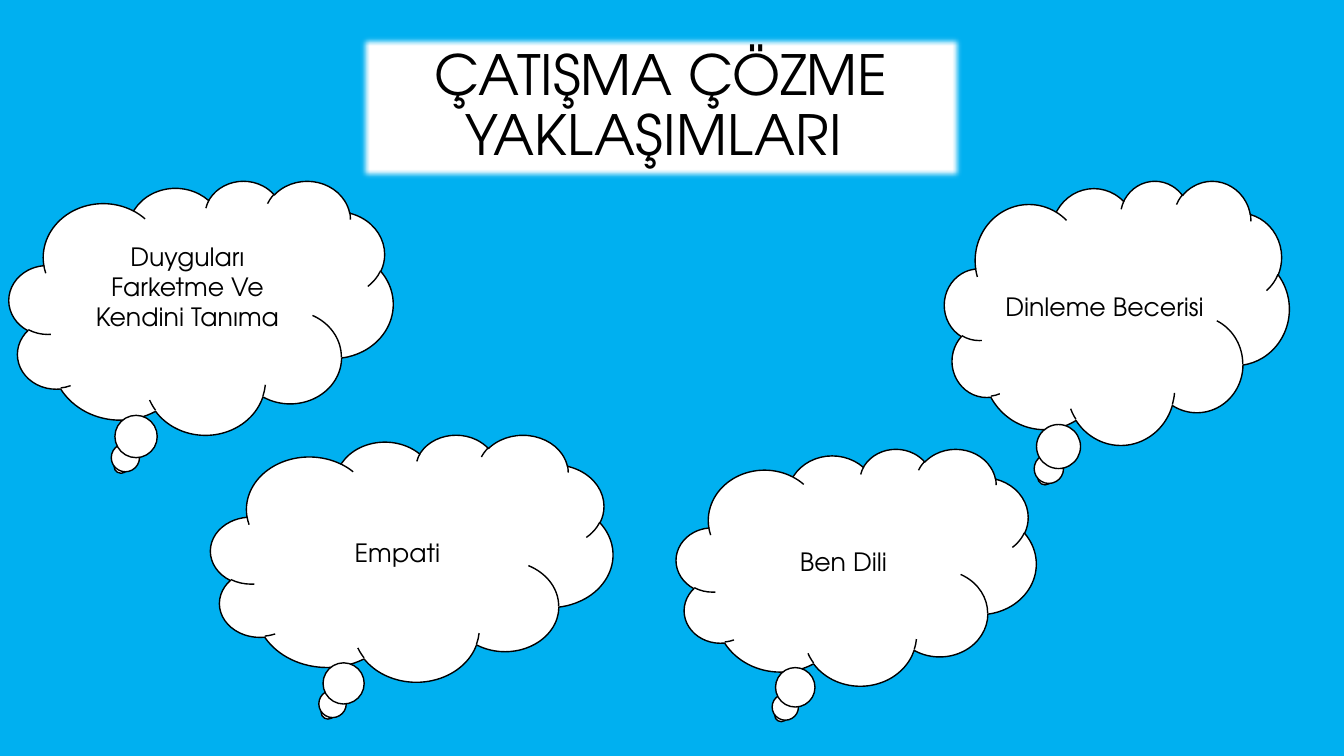
from dataclasses import dataclass

from lxml import etree
from pptx import Presentation
from pptx import util as u
from pptx.dml import color
from pptx.enum import shapes, text
from pptx.oxml import ns


@dataclass(frozen=True)
class Theme:
    font: str = "TeX Gyre Adventor"
    background: color.RGBColor = color.RGBColor(0x00, 0xB0, 0xF0)
    panel: color.RGBColor = color.RGBColor(0xFF, 0xFF, 0xFF)
    ink: color.RGBColor = color.RGBColor(0x00, 0x00, 0x00)
    title_size: float = 39.6
    cloud_size: float = 18
    outline: float = 1
    soft_edge: float = 5


@dataclass(frozen=True)
class Panel:
    """A white shape with centred text; all lengths are in points."""
    wording: str
    left: float
    top: float
    width: float
    height: float
    bottom_inset: float = 3.6


THEME = Theme()
TITLE = Panel("ÇATIŞMA ÇÖZME YAKLAŞIMLARI ", 256.32, 24.48, 432, 104.4)
CLOUDS = [
    Panel("Duyguları Farketme Ve Kendini Tanıma", 6.48, 128.88, 274.32, 181.44,
          bottom_inset=25),
    Panel("Ben Dili", 483.12, 320.4, 257.04, 169.2),
    Panel("Dinleme Becerisi", 674.64, 128.88, 246.24, 188.64),
    Panel("Empati", 150.48, 310.32, 287.28, 176.4),
]


def add_panel(slide, panel: Panel, kind: shapes.MSO_SHAPE, size: float):
    shape = slide.shapes.add_shape(kind, u.Pt(panel.left), u.Pt(panel.top),
                                   u.Pt(panel.width), u.Pt(panel.height))
    shape.shadow.inherit = False
    shape.fill.solid()
    shape.fill.fore_color.rgb = THEME.panel

    frame = shape.text_frame
    frame.word_wrap = True
    frame.vertical_anchor = text.MSO_ANCHOR.MIDDLE
    frame.margin_bottom = u.Pt(panel.bottom_inset)
    paragraph = frame.paragraphs[0]
    paragraph.alignment = text.PP_ALIGN.CENTER
    run = paragraph.add_run()
    run.text = panel.wording
    run.font.name = THEME.font
    run.font.size = u.Pt(size)
    run.font.color.rgb = THEME.ink
    return shape


def add_title(slide, panel: Panel) -> None:
    shape = add_panel(slide, panel, shapes.MSO_SHAPE.RECTANGLE, THEME.title_size)
    shape.line.fill.background()
    shape.text_frame.paragraphs[0].line_spacing = 0.9
    effects = shape.element.spPr.find(ns.qn("a:effectLst"))
    etree.SubElement(effects, ns.qn("a:softEdge"), rad=str(u.Pt(THEME.soft_edge)))


def add_cloud(slide, panel: Panel) -> None:
    shape = add_panel(slide, panel, shapes.MSO_SHAPE.CLOUD_CALLOUT, THEME.cloud_size)
    shape.line.color.rgb = THEME.ink
    shape.line.width = u.Pt(THEME.outline)


def main() -> None:
    presentation = Presentation()
    presentation.slide_width = u.Pt(960)
    presentation.slide_height = u.Pt(540)
    slide = presentation.slides.add_slide(presentation.slide_layouts[6])
    slide.background.fill.solid()
    slide.background.fill.fore_color.rgb = THEME.background

    add_title(slide, TITLE)
    for cloud in CLOUDS:
        add_cloud(slide, cloud)
    presentation.save("out.pptx")


if __name__ == "__main__":
    main()
